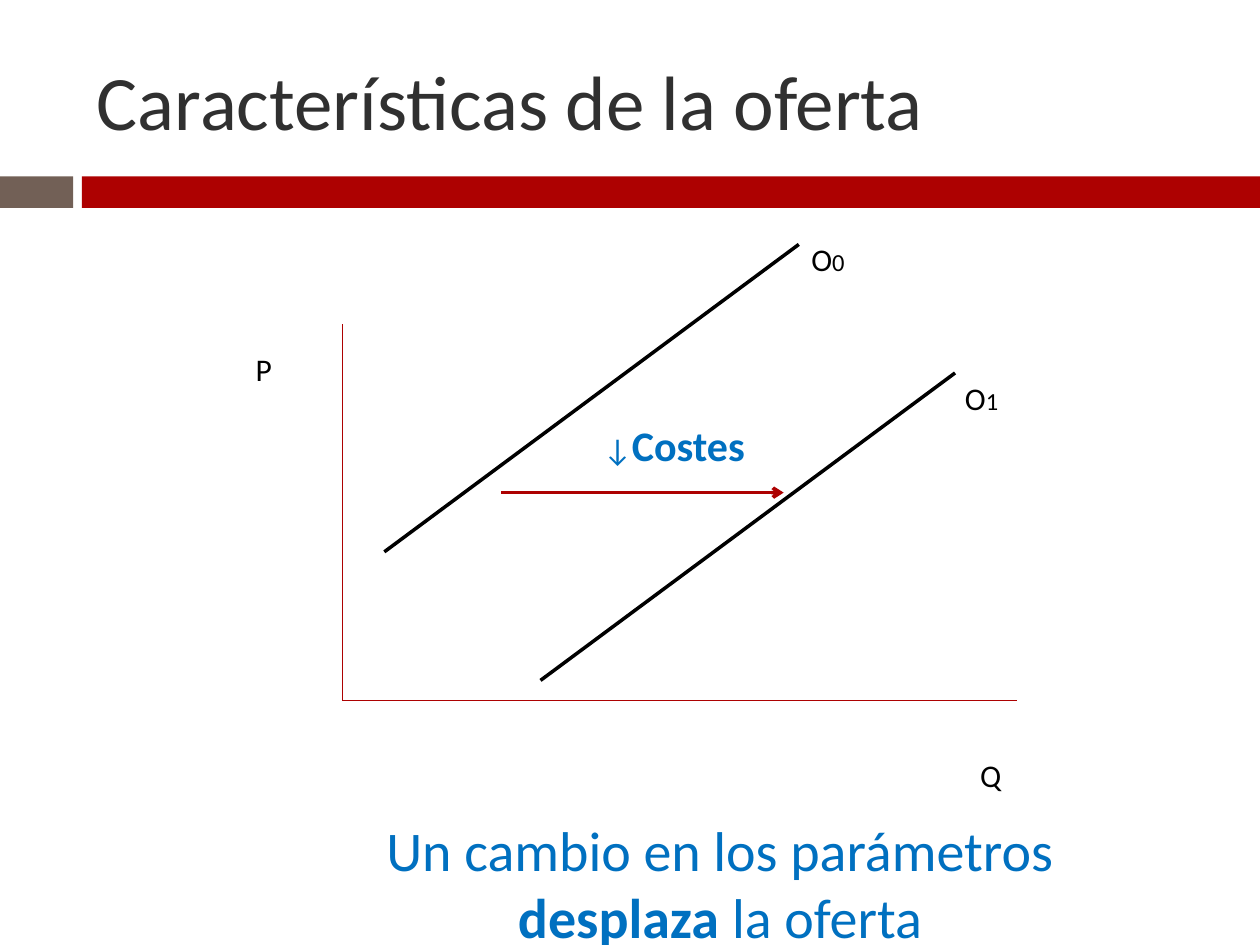
from dataclasses import dataclass

from lxml.etree import SubElement
from pptx import Presentation
from pptx.dml.color import RGBColor
from pptx.enum.shapes import MSO_CONNECTOR, MSO_SHAPE
from pptx.enum.text import MSO_ANCHOR, MSO_AUTO_SIZE, PP_ALIGN
from pptx.oxml.ns import qn
from pptx.util import Inches, Pt


@dataclass(frozen=True)
class Theme:
    font: str = "Calibri"
    red: str = "AD0101"
    taupe: str = "726056"
    heading: str = "303030"
    ink: str = "000000"
    blue: str = "0070C0"
    title_size: int = 44
    message_size: int = 32
    cause_size: int = 24
    label_size: int = 18
    index_size: int = 14


theme = Theme()
deck = Presentation()
deck.slide_width, deck.slide_height = Inches(10), Inches(7.5)
slide = deck.slides.add_slide(deck.slide_layouts[6])
CELL = deck.slide_width // 100  # grid of 100 columns by 75 rows


def add_text(runs, box, *, size=theme.label_size, color=theme.ink,
             align=PP_ALIGN.LEFT, anchor=MSO_ANCHOR.TOP, wrap=True, grow=True):
    """Write runs of (text, format) in one paragraph; box is in grid cells."""
    frame = slide.shapes.add_textbox(*(round(v * CELL) for v in box)).text_frame
    frame.word_wrap = wrap
    frame.auto_size = MSO_AUTO_SIZE.SHAPE_TO_FIT_TEXT if grow else MSO_AUTO_SIZE.NONE
    frame.vertical_anchor = anchor
    paragraph = frame.paragraphs[0]
    paragraph.alignment = align
    for text, style in runs:
        run = paragraph.add_run()
        run.text = text
        run.font.name = theme.font
        run.font.size = Pt(style.get("size", size))
        run.font.bold = style.get("bold", False)
        run.font.color.rgb = RGBColor.from_string(color)


def add_line(start, end, color, width, arrow=False):
    line = slide.shapes.add_connector(
        MSO_CONNECTOR.STRAIGHT, *(round(v * CELL) for v in (*start, *end)))
    line.line.color.rgb = RGBColor.from_string(color)
    line.line.width = Pt(width)
    if arrow:
        SubElement(line.line._get_or_add_ln(), qn("a:tailEnd"), type="arrow")
    SubElement(line._element.spPr, qn("a:effectLst"))


# Heading and its band
for left, width, color in ((0, 5.8, theme.taupe), (6.5, 93.5, theme.red)):
    band = slide.shapes.add_shape(
        MSO_SHAPE.RECTANGLE, *(round(v * CELL) for v in (left, 14, width, 2.5)))
    band.shadow.inherit = False
    band.fill.solid()
    band.fill.fore_color.rgb = RGBColor.from_string(color)
    band.line.fill.background()

add_text([("Características de la oferta", {})], (6.7, 2.5, 89.2, 10.8),
         size=theme.title_size, color=theme.heading,
         anchor=MSO_ANCHOR.MIDDLE, grow=False)

# Axes
origin = (27.2, 55.6)
for axis_end in ((27.2, 25.7), (80.7, 55.6)):
    add_line(origin, axis_end, theme.red, 0.79)
add_text([("P", {})], (19.3, 27.3, 7.9, 4))
add_text([("Q", {})], (76.8, 59.5, 11, 4))

# Parallel supply curves, each with its label
run_length, rise = 32.9, 24.4
for index, (x, y), label_at in (("0", (30.5, 43.8), (63.4, 18.6)),
                                ("1", (42.9, 54), (75.6, 29.6))):
    add_line((x, y), (x + run_length, y - rise), theme.ink, 2)
    add_text([("O", {}), (index, {"size": theme.index_size})],
             (*label_at, 5.1, 4), wrap=False)

# Shift of the curve and its cause
add_line((39.8, 39.1), (62.2, 39.1), theme.red, 2, arrow=True)
add_text([("↓", {}), ("Costes", {"size": theme.cause_size, "bold": True})],
         (46.9, 32.8, 26, 5), color=theme.blue)

add_text([("Un cambio en los parámetros ", {}), ("desplaza", {"bold": True}),
          (" la oferta", {})], (28.1, 64.2, 58.1, 11.8),
         size=theme.message_size, color=theme.blue, align=PP_ALIGN.CENTER)

deck.save("out.pptx")
